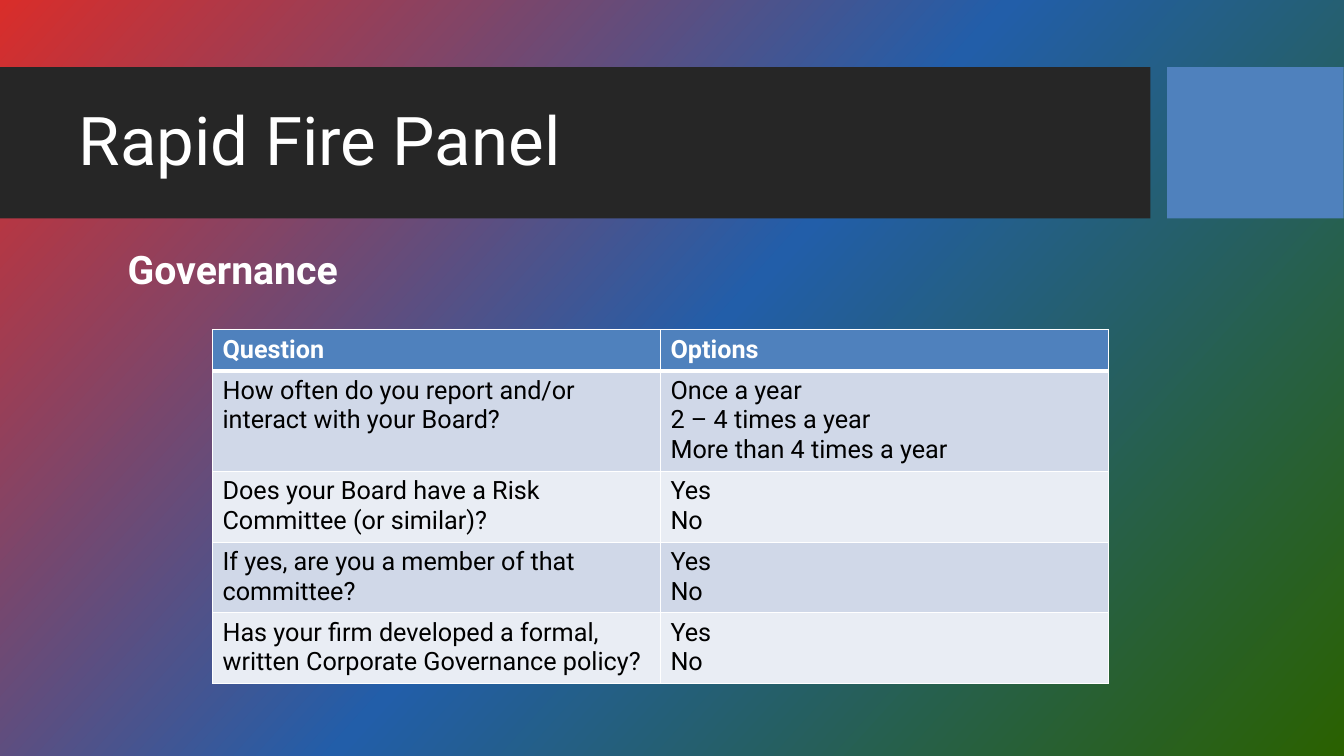
"""Build the Rapid Fire Panel slide on governance."""
from copy import deepcopy
from lxml.etree import SubElement
from pptx import Presentation
from pptx.dml.color import RGBColor
from pptx.enum.shapes import MSO_SHAPE
from pptx.enum.text import MSO_ANCHOR, PP_ALIGN
from pptx.oxml.ns import qn
from pptx.util import Pt


def rgb(value):
    return RGBColor.from_string(value)


def add_run(p, text, size, color, bold=False):
    r = p.add_run()
    r.text = text
    r.font.name = "Roboto"
    r.font.size = Pt(size)
    r.font.bold = bold
    r.font.color.rgb = rgb(color)


prs = Presentation()
prs.slide_width, prs.slide_height = Pt(960), Pt(540)
s = prs.slides.add_slide(prs.slide_layouts[5])

fill = s.background.fill
fill.gradient()
fill.gradient_angle = 318
stops = s.element.find(".//" + qn("a:gsLst"))
stops.append(deepcopy(stops[0]))
for stop, (pos, color) in zip(fill.gradient_stops, [(0, "D92D2A"), (0.5, "225EA9"), (1, "2A6100")]):
    stop.position = pos
    stop.color.rgb = rgb(color)

for left, width, color in [(0, 821.8, "262626"), (833.6, 126.2, "4F81BD")]:
    band = s.shapes.add_shape(MSO_SHAPE.RECTANGLE, Pt(left), Pt(48), Pt(width), Pt(108))
    band.shadow.inherit = False
    band.fill.solid()
    band.fill.fore_color.rgb = rgb(color)
    band.line.fill.background()

title = s.shapes.title
title.left, title.top, title.width, title.height = Pt(49), Pt(67), Pt(772.6), Pt(72)
s.shapes._spTree.append(title.element)
tf = title.text_frame
tf.vertical_anchor = MSO_ANCHOR.MIDDLE
p = tf.paragraphs[0]
p.alignment = PP_ALIGN.LEFT
p.line_spacing = 0.9
add_run(p, "Rapid Fire Panel", 48, "FFFFFF")

tf = s.shapes.add_textbox(Pt(84.2), Pt(171.4), Pt(868.3), Pt(177)).text_frame
tf.word_wrap = True
add_run(tf.paragraphs[0], "Governance", 28, "FFFFFF", True)

yes_no = ["Yes", "No"]
rows = [
    ("Question", ["Options"]),
    ("How often do you report and/or interact with your Board?",
     ["Once a year", "2 – 4 times a year", "More than 4 times a year"]),
    ("Does your Board have a Risk Committee (or similar)?", yes_no),
    ("If yes, are you a member of that committee?", yes_no),
    ("Has your firm developed a formal, written Corporate Governance policy?", yes_no),
]
heights = [29.2, 71.8, 50.4, 50.4, 50.4]
table = s.shapes.add_table(len(rows), 2, Pt(151.8), Pt(235.6), Pt(640), Pt(sum(heights))).table
for i, (question, options) in enumerate(rows):
    table.rows[i].height = Pt(heights[i])
    header = i == 0
    for j, lines in enumerate([[question], options]):
        cell = table.cell(i, j)
        tcPr = cell._tc.get_or_add_tcPr()
        for side in ("L", "R", "T", "B"):
            thick = (header and side == "B") or (i == 1 and side == "T")
            ln = SubElement(tcPr, qn("a:ln" + side), w=str(Pt(3 if thick else 1)))
            SubElement(SubElement(ln, qn("a:solidFill")), qn("a:srgbClr"), val="FFFFFF")
        cell.fill.solid()
        cell.fill.fore_color.rgb = rgb("4F81BD" if header else "D0D8E8" if i % 2 else "E9EDF4")
        tf = cell.text_frame
        for k, line in enumerate(lines):
            p = tf.add_paragraph() if k else tf.paragraphs[0]
            add_run(p, line, 18, "FFFFFF" if header else "000000", header)

prs.save("out.pptx")
